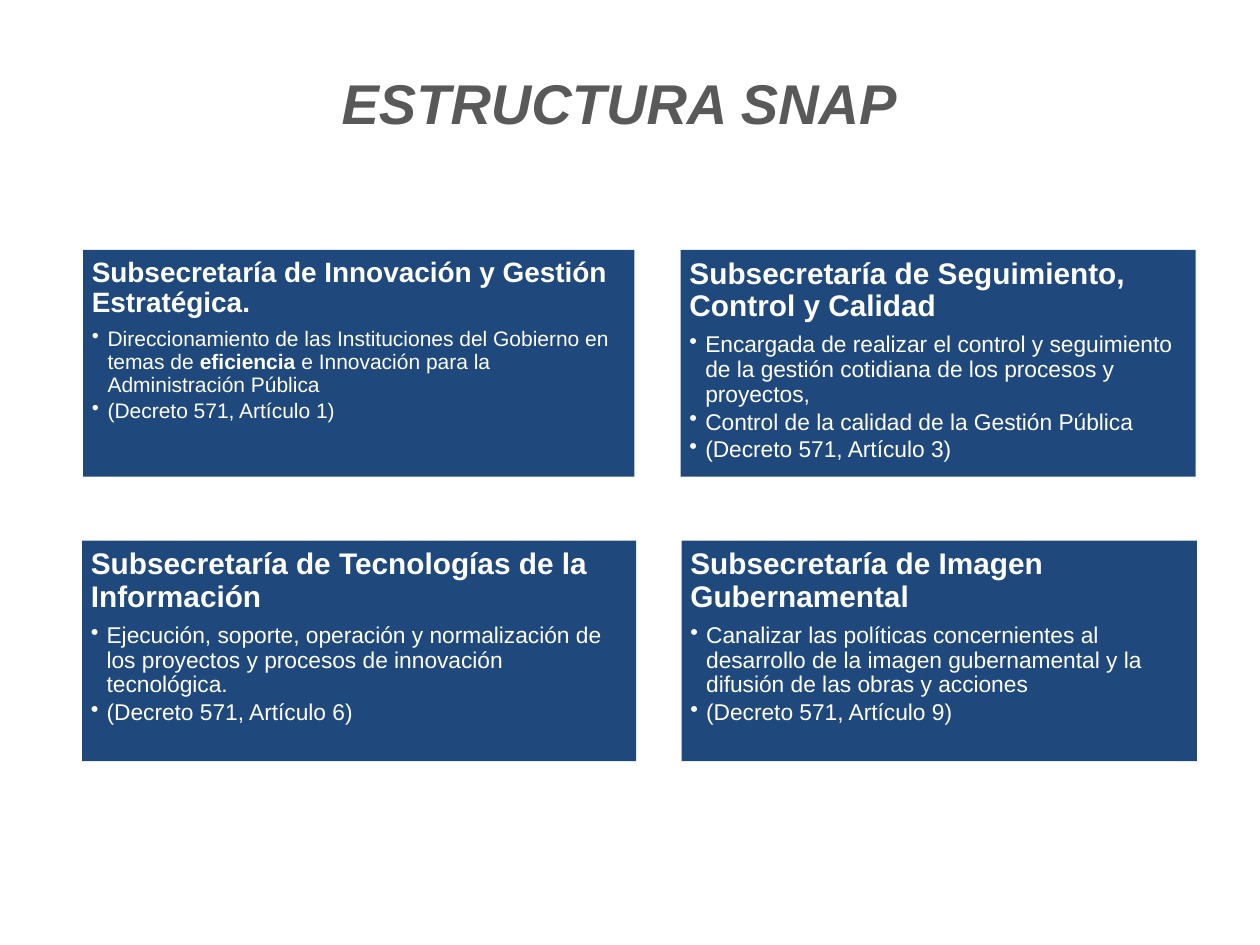
from dataclasses import dataclass

from pptx import Presentation
from pptx.dml.color import RGBColor
from pptx.enum.shapes import MSO_SHAPE
from pptx.enum.text import MSO_ANCHOR, MSO_AUTO_SIZE, PP_ALIGN
from pptx.oxml import parse_xml
from pptx.oxml.ns import nsdecls
from pptx.util import Pt

RECTANGLE = MSO_SHAPE.RECTANGLE
TOP = MSO_ANCHOR.TOP
NO_AUTOFIT = MSO_AUTO_SIZE.NONE
LEFT, CENTER = PP_ALIGN.LEFT, PP_ALIGN.CENTER
TITLE_ONLY = 5


@dataclass(frozen=True)
class Theme:
    font: str = "Arial"
    panel: RGBColor = RGBColor(0x1F, 0x49, 0x7D)
    panel_text: RGBColor = RGBColor(0xFF, 0xFF, 0xFF)
    title_text: RGBColor = RGBColor(0x59, 0x59, 0x59)
    title_size: float = 32
    heading_size: float = 17
    body_size: float = 13
    compact_heading_size: float = 16
    compact_body_size: float = 12
    inset: float = 5
    indent: float = 9


THEME = Theme()
REGULAR = (THEME.heading_size, THEME.body_size)
COMPACT = (THEME.compact_heading_size, THEME.compact_body_size)

# Position (left, top, width, height), type sizes, heading, bullets.
# A bullet is a list of (text, bold) spans.
PANELS = [
    ((47.5, 142.8, 315.1, 129.6), COMPACT,
     "Subsecretaría de Innovación y Gestión Estratégica.",
     [[("Direccionamiento de las Instituciones del Gobierno en temas de ", False),
       ("eficiencia ", True),
       ("e Innovación para la Administración Pública", False)],
      [("(Decreto 571, Artículo 1)", False)]]),
    ((389, 142.8, 294.2, 129.6), REGULAR,
     "Subsecretaría de Seguimiento, Control y Calidad",
     [[("Encargada de realizar el control y seguimiento de la gestión "
        "cotidiana de los procesos y proyectos,", False)],
      [("Control de la calidad de la Gestión Pública", False)],
      [("(Decreto 571, Artículo 3)", False)]]),
    ((46.9, 308.9, 316.6, 126), REGULAR,
     "Subsecretaría de Tecnologías de la Información",
     [[("Ejecución, soporte, operación y normalización de los proyectos y "
        "procesos de innovación tecnológica.", False)],
      [("(Decreto 571, Artículo 6)", False)]]),
    ((389.5, 308.9, 294.5, 126), REGULAR,
     "Subsecretaría de Imagen Gubernamental",
     [[("Canalizar las políticas concernientes al desarrollo de la imagen "
        "gubernamental y la difusión de las obras y acciones", False)],
      [("(Decreto 571, Artículo 9)", False)]]),
]


def set_values(target, values):
    for name, value in values.items():
        setattr(target, name, value)


def add_span(para, text, size, color, bold=False, italic=False):
    span = para.add_run()
    span.text = text
    set_values(span.font, {"name": THEME.font, "size": Pt(size),
                           "bold": bold, "italic": italic})
    span.font.color.rgb = color


def format_frame(frame, inset):
    set_values(frame, {"word_wrap": True, "auto_size": NO_AUTOFIT,
                       "vertical_anchor": TOP, "margin_left": Pt(inset),
                       "margin_right": Pt(inset), "margin_top": Pt(inset),
                       "margin_bottom": Pt(inset)})


def format_paragraph(para, space_after):
    set_values(para, {"alignment": LEFT, "line_spacing": 0.9,
                      "space_before": Pt(0), "space_after": Pt(space_after)})


def add_bullet(para):
    properties = para._p.get_or_add_pPr()
    properties.set("marL", str(Pt(THEME.indent)))
    properties.set("indent", str(-Pt(THEME.indent)))
    properties.append(parse_xml(f'<a:buChar {nsdecls("a")} char="•"/>'))


def add_title(page, text):
    title = page.shapes.title
    set_values(title, {"left": Pt(102), "top": Pt(33),
                       "width": Pt(504), "height": Pt(34.6)})
    format_frame(title.text_frame, 6)
    para = title.text_frame.paragraphs[0]
    para.alignment = CENTER
    add_span(para, text, THEME.title_size, THEME.title_text, bold=True, italic=True)


def add_panel(page, bounds, sizes, heading, bullets):
    heading_size, body_size = sizes
    box = page.shapes.add_shape(RECTANGLE, *(Pt(value) for value in bounds))
    box.shadow.inherit = False
    box.fill.solid()
    box.fill.fore_color.rgb = THEME.panel
    box.line.fill.background()
    frame = box.text_frame
    format_frame(frame, THEME.inset)

    para = frame.paragraphs[0]
    format_paragraph(para, round(heading_size * 0.35, 1))
    add_span(para, heading, heading_size, THEME.panel_text, bold=True)
    for spans in bullets:
        para = frame.add_paragraph()
        para.level = 1
        format_paragraph(para, round(body_size * 0.15, 1))
        add_bullet(para)
        for text, bold in spans:
            add_span(para, text, body_size, THEME.panel_text, bold=bold)


def main():
    deck = Presentation()
    set_values(deck, {"slide_width": Pt(720), "slide_height": Pt(540)})
    page = deck.slides.add_slide(deck.slide_layouts[TITLE_ONLY])
    add_title(page, "ESTRUCTURA SNAP")
    for panel in PANELS:
        add_panel(page, *panel)
    deck.save("out.pptx")


if __name__ == "__main__":
    main()
